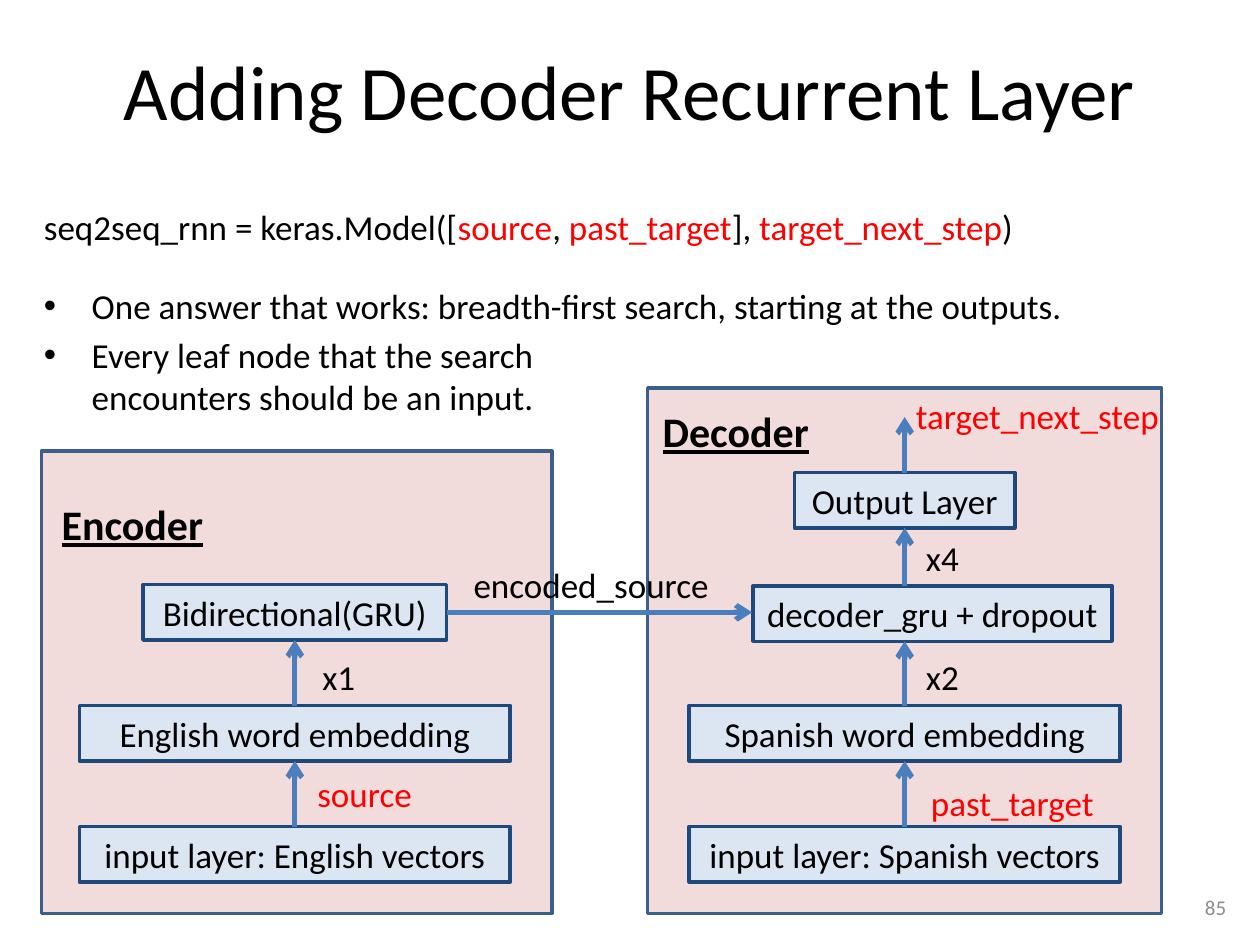
import dataclasses
import typing

import lxml.etree
import pptx
import pptx.dml.color
import pptx.enum.shapes
import pptx.enum.text
import pptx.oxml.ns
import pptx.util

Inches = pptx.util.Inches
Align = pptx.enum.text.PP_ALIGN
Anchor = pptx.enum.text.MSO_ANCHOR


@dataclasses.dataclass(frozen=True)
class Theme:
    font: str = "Calibri"
    black: str = "000000"
    red: str = "FF0000"
    gray: str = "8C8C8C"
    panel_fill: str = "F2DCDB"
    panel_line: str = "3A5F8C"
    layer_fill: str = "DCE6F2"
    layer_line: str = "1F497D"
    arrow: str = "4B7EBC"
    title_size: float = 44
    heading_size: float = 24
    body_size: float = 20
    number_size: float = 12
    outline: float = 2
    arrow_width: float = 3


THEME = Theme()
ROW_HEIGHT = 0.44


class Panel(typing.NamedTuple):
    left: float
    top: float
    width: float
    height: float


class Layer(typing.NamedTuple):
    text: str
    center: float
    top: float
    width: float


class Label(typing.NamedTuple):
    text: str
    left: float
    top: float
    width: float
    color: str = THEME.black


class Arrow(typing.NamedTuple):
    start: tuple[float, float]
    end: tuple[float, float]


ENCODER_X, DECODER_X = 2.34, 7.18
INPUT_Y, EMBEDDING_Y, RECURRENT_Y, OUTPUT_Y = 6.56, 5.6, 4.64, 3.75
INPUT_WIDTH = 3.42
PANELS = [Panel(5.14, 3.08, 4.08, 4.17), Panel(0.33, 3.58, 4.05, 3.67)]
HEADINGS = [Label("Decoder", 5.16, 3.17, 1.39), Label("Encoder", 0.39, 3.91, 1.61)]
ENCODER = [
    Layer("input layer: English vectors", ENCODER_X, INPUT_Y, INPUT_WIDTH),
    Layer("English word embedding", ENCODER_X, EMBEDDING_Y, INPUT_WIDTH),
    Layer("Bidirectional(GRU)", ENCODER_X, RECURRENT_Y, 2.41),
]
DECODER = [
    Layer("input layer: Spanish vectors", DECODER_X, INPUT_Y, INPUT_WIDTH),
    Layer("Spanish word embedding", DECODER_X, EMBEDDING_Y, INPUT_WIDTH),
    Layer("decoder_gru + dropout", 7.4, RECURRENT_Y + 0.01, 2.85),
    Layer("Output Layer", DECODER_X, OUTPUT_Y, 1.75),
]
LABELS = [
    Label("source", 2.42, 6.08, 0.96, THEME.red),
    Label("past_target", 7.29, 6.15, 1.51, THEME.red),
    Label("encoded_source", 3.66, 4.42, 2.09),
    Label("x1", 2.46, 5.15, 0.46),
    Label("x2", 7.25, 5.15, 0.46),
    Label("x4", 7.25, 4.21, 0.46),
    Label("target_next_step", 7.17, 3.08, 2.15, THEME.red),
]
CODE = [
    ("seq2seq_rnn = keras.Model([", THEME.black),
    ("source", THEME.red),
    (", ", THEME.black),
    ("past_target", THEME.red),
    ("], ", THEME.black),
    ("target_next_step", THEME.red),
    (")", THEME.black),
]
BULLETS = [
    ("One answer that works: breadth-first search, starting at the outputs.", 21),
    ("Every leaf node that the search\vencounters should be an input.", 4),
]


def rgb(color: str):
    return pptx.dml.color.RGBColor.from_string(color)


def write(paragraph, text: str, *, size: float = THEME.body_size,
          color: str = THEME.black, align=Align.LEFT, emphasis: bool = False) -> None:
    paragraph.alignment = align
    for index, line in enumerate(text.split("\v")):
        if index:
            paragraph.add_line_break()
        run = paragraph.add_run()
        run.text = line
        run.font.name = THEME.font
        run.font.size = pptx.util.Pt(size)
        run.font.color.rgb = rgb(color)
        run.font.bold = emphasis
        run.font.underline = emphasis


def add_text_frame(slide, left: float, top: float, width: float, height: float,
                   wrap: bool = True, anchor=Anchor.TOP):
    shape = slide.shapes.add_textbox(
        Inches(left), Inches(top), Inches(width), Inches(height))
    shape.text_frame.word_wrap = wrap
    shape.text_frame.vertical_anchor = anchor
    return shape.text_frame


def add_rectangle(slide, left: float, top: float, width: float, height: float,
                  fill: str, line: str):
    shape = slide.shapes.add_shape(
        pptx.enum.shapes.MSO_SHAPE.RECTANGLE,
        Inches(left), Inches(top), Inches(width), Inches(height))
    shape.shadow.inherit = False
    shape.fill.solid()
    shape.fill.fore_color.rgb = rgb(fill)
    shape.line.color.rgb = rgb(line)
    shape.line.width = pptx.util.Pt(THEME.outline)
    return shape


def add_layer(slide, layer: Layer) -> None:
    shape = add_rectangle(slide, layer.center - layer.width / 2, layer.top,
                          layer.width, ROW_HEIGHT, THEME.layer_fill, THEME.layer_line)
    shape.text_frame.word_wrap = True
    write(shape.text_frame.paragraphs[0], layer.text, align=Align.CENTER)


def add_arrow(slide, arrow: Arrow) -> None:
    connector = slide.shapes.add_connector(
        pptx.enum.shapes.MSO_CONNECTOR.STRAIGHT,
        *(Inches(value) for value in arrow.start + arrow.end))
    connector.line.color.rgb = rgb(THEME.arrow)
    connector.line.width = pptx.util.Pt(THEME.arrow_width)
    qualified = pptx.oxml.ns.qn
    lxml.etree.SubElement(connector.line._get_or_add_ln(),
                          qualified("a:tailEnd"), type="arrow")
    lxml.etree.SubElement(connector._element.spPr, qualified("a:effectLst"))


def add_bullet(text_frame, text: str, space_before: float) -> None:
    paragraph = text_frame.add_paragraph()
    write(paragraph, text)
    paragraph.space_before = pptx.util.Pt(space_before)
    properties = paragraph._p.get_or_add_pPr()
    properties.set("marL", str(Inches(0.38)))
    properties.set("indent", str(Inches(-0.38)))
    qualified = pptx.oxml.ns.qn
    lxml.etree.SubElement(properties, qualified("a:buFont"), typeface="Arial")
    lxml.etree.SubElement(properties, qualified("a:buChar"), char="•")


def add_body(slide) -> None:
    text_frame = add_text_frame(slide, 0.25, 1.58, 9.5, 1.42)
    code = text_frame.paragraphs[0]
    code.space_before = pptx.util.Pt(4)
    for text, color in CODE:
        write(code, text, color=color)
    for text, space_before in BULLETS:
        add_bullet(text_frame, text, space_before)


def main() -> None:
    presentation = pptx.Presentation()
    presentation.slide_width = Inches(10)
    presentation.slide_height = Inches(7.5)
    slide = presentation.slides.add_slide(presentation.slide_layouts[6])

    title = add_text_frame(slide, 0.5, 0.17, 9, 1.08, anchor=Anchor.MIDDLE)
    write(title.paragraphs[0], "Adding Decoder Recurrent Layer",
          size=THEME.title_size, align=Align.CENTER)
    add_body(slide)
    number = add_text_frame(slide, 8.83, 7, 1, 0.4, anchor=Anchor.MIDDLE)
    write(number.paragraphs[0], "85", size=THEME.number_size,
          color=THEME.gray, align=Align.RIGHT)

    for panel in PANELS:
        add_rectangle(slide, *panel, THEME.panel_fill, THEME.panel_line)
    for heading in HEADINGS:
        text_frame = add_text_frame(slide, heading.left, heading.top, heading.width, 0.5)
        write(text_frame.paragraphs[0], heading.text,
              size=THEME.heading_size, emphasis=True)

    for stack in (ENCODER, DECODER):
        for layer in stack:
            add_layer(slide, layer)
        for lower, upper in zip(stack, stack[1:]):
            add_arrow(slide, Arrow((stack[0].center, lower.top),
                                   (stack[0].center, upper.top + ROW_HEIGHT)))
    add_arrow(slide, Arrow((3.55, 4.86), (5.97, 4.86)))
    add_arrow(slide, Arrow((DECODER_X, OUTPUT_Y), (DECODER_X, 3.31)))

    for label in LABELS:
        text_frame = add_text_frame(slide, label.left, label.top, label.width,
                                    ROW_HEIGHT, wrap=False)
        write(text_frame.paragraphs[0], label.text, color=label.color)

    presentation.save("out.pptx")


if __name__ == "__main__":
    main()
